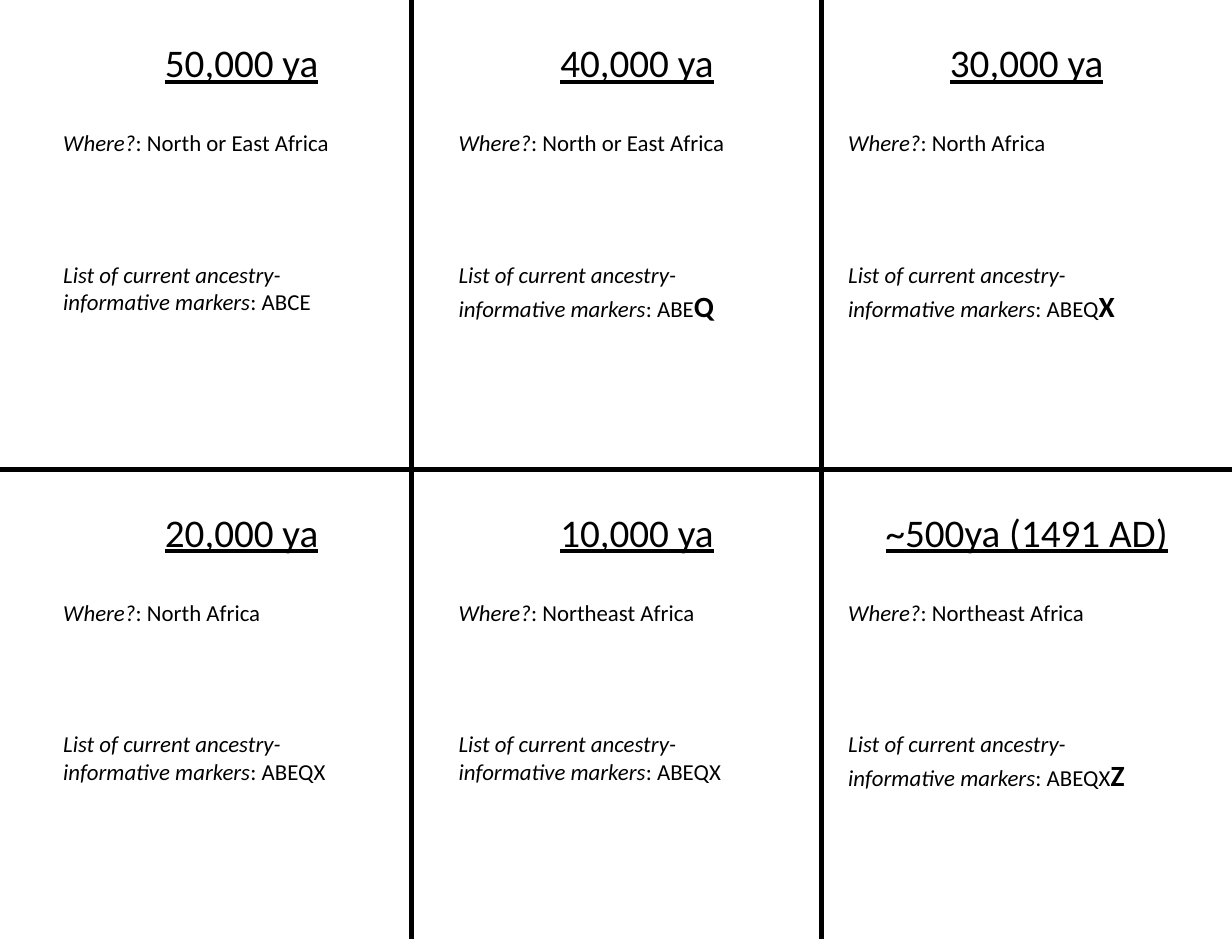
from lxml.etree import SubElement
from pptx import Presentation
from pptx.dml.color import RGBColor
from pptx.enum.shapes import MSO_CONNECTOR
from pptx.enum.text import MSO_AUTO_SIZE, PP_ALIGN
from pptx.oxml.ns import qn
from pptx.util import Pt

BLACK = RGBColor(0x00, 0x00, 0x00)
SLIDE_WIDTH, SLIDE_HEIGHT = 756, 576
PANEL_HEIGHT = SLIDE_HEIGHT / 2
COLUMN_LEFTS = (31.7, 274.3, 513.4)
COLUMN_RULES = (252.7, 504)

# Date, place, markers already carried, marker newly gained
PERIODS = (
    ("50,000 ya", "North or East Africa", "ABCE", ""),
    ("40,000 ya", "North or East Africa", "ABE", "Q"),
    ("30,000 ya", "North Africa", "ABEQ", "X"),
    ("20,000 ya", "North Africa", "ABEQX", ""),
    ("10,000 ya", "Northeast Africa", "ABEQX", ""),
    ("~500ya (1491 AD)", "Northeast Africa", "ABEQX", "Z"),
)


class TimelineSlide:
    base = {"name": "Calibri", "size": Pt(14)}
    heading = {"size": Pt(24), "underline": True}
    label = {"italic": True}
    answer = {"italic": False}
    new_marker = {"size": Pt(18), "bold": True}

    def __init__(self, slide):
        self.slide = slide

    def rule(self, x1, y1, x2, y2):
        divider = self.slide.shapes.add_connector(
            MSO_CONNECTOR.STRAIGHT, Pt(x1), Pt(y1), Pt(x2), Pt(y2))
        divider.line.color.rgb = BLACK
        divider.line.width = Pt(3)
        SubElement(divider._element.spPr, qn("a:effectLst"))

    def text(self, left, top, width, height, runs, align=PP_ALIGN.LEFT):
        """Add a text box from (wording, format) pairs, skipping empty wording."""
        frame = self.slide.shapes.add_textbox(
            Pt(left), Pt(top), Pt(width), Pt(height)).text_frame
        frame.word_wrap = True
        frame.auto_size = MSO_AUTO_SIZE.SHAPE_TO_FIT_TEXT
        paragraph = frame.paragraphs[0]
        paragraph.alignment = align
        for wording, style in runs:
            if not wording:
                continue
            run = paragraph.add_run()
            run.text = wording
            run.font.color.rgb = BLACK
            for attribute, value in {**self.base, **style}.items():
                setattr(run.font, attribute, value)

    def panel(self, left, top, date, place, markers, gained):
        self.text(left, top + 20.2, 233.3, 36, [(date, self.heading)],
                  PP_ALIGN.CENTER)
        self.text(left, top + 75.6, 205.2, 24.5, [
            ("Where?", self.label),
            (f": {place}", self.answer)])
        self.text(left, top + 156.2, 205.2, 46 if gained else 41, [
            ("List of current ancestry-informative markers", self.label),
            (f": {markers}", self.answer),
            (gained, self.new_marker)])


def main():
    presentation = Presentation()
    presentation.slide_width = Pt(SLIDE_WIDTH)
    presentation.slide_height = Pt(SLIDE_HEIGHT)
    blank_layout = presentation.slide_layouts[6]
    timeline = TimelineSlide(presentation.slides.add_slide(blank_layout))

    timeline.rule(0, PANEL_HEIGHT, SLIDE_WIDTH, PANEL_HEIGHT)
    for x in COLUMN_RULES:
        timeline.rule(x, 0, x, SLIDE_HEIGHT)

    for index, period in enumerate(PERIODS):
        row, column = divmod(index, len(COLUMN_LEFTS))
        timeline.panel(COLUMN_LEFTS[column], row * PANEL_HEIGHT, *period)

    presentation.save("out.pptx")


if __name__ == "__main__":
    main()
